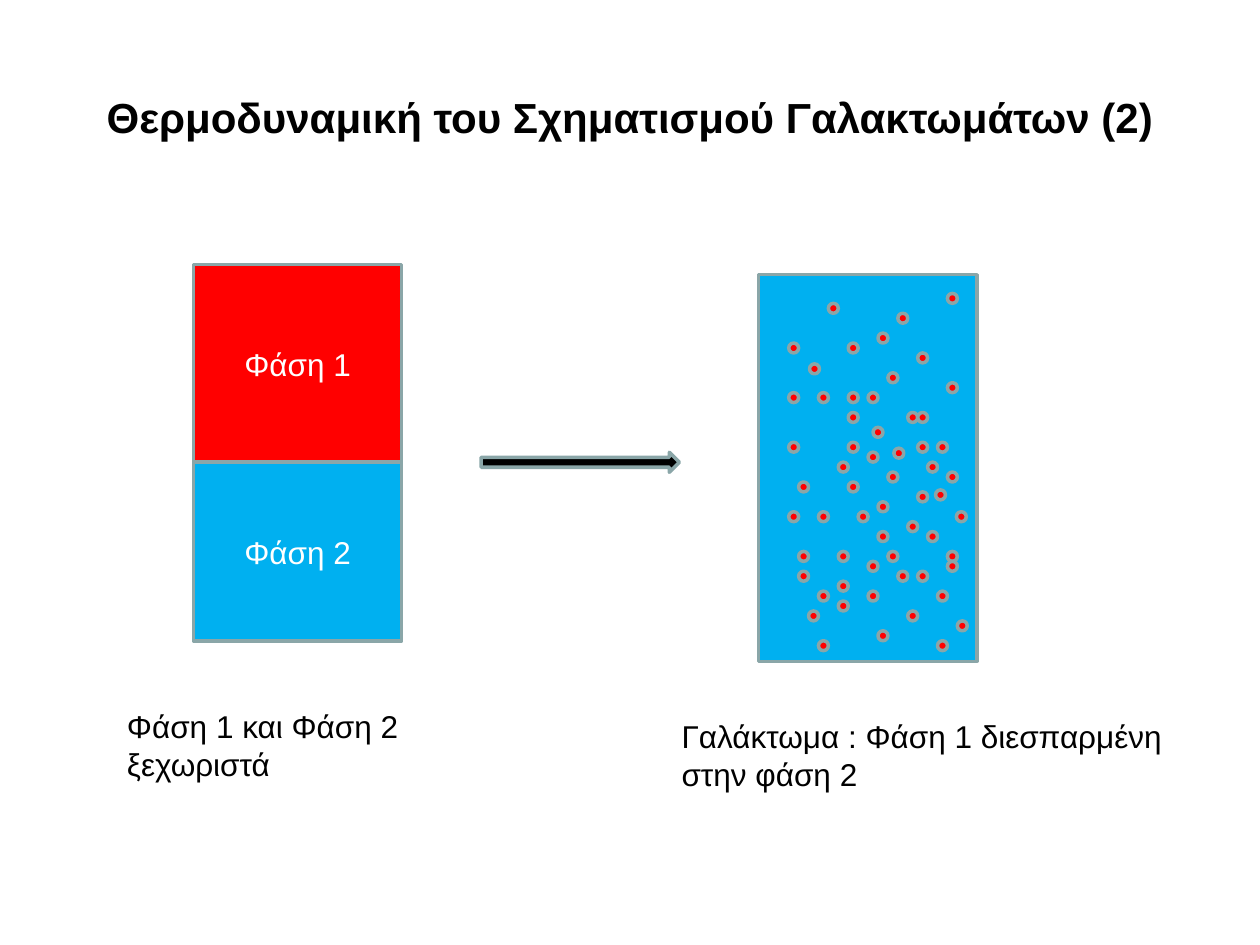
import pptx
import pptx.dml.color
import pptx.enum.shapes
import pptx.enum.text
import pptx.util

Pt = pptx.util.Pt
SHAPE = pptx.enum.shapes.MSO_SHAPE
ALIGN = pptx.enum.text.PP_ALIGN
ANCHOR = pptx.enum.text.MSO_ANCHOR

RED, BLUE, BLACK, WHITE, OUTLINE = "FF0000", "00B0F0", "000000", "FFFFFF", "8AA6A8"

# Droplet columns in each row of a 2 mm grid
DROPLET_STEP = 5.67
DROPLET_LEFT, DROPLET_TOP = 450.7, 167.7
DROPLETS = {
    0: [16], 1: [4], 2: [11], 4: [9], 5: [0, 6], 6: [13], 7.1: [2.1],
    8: [10], 9: [16], 10: [0, 3, 6, 8], 12: [6, 12, 13], 13.5: [8.5],
    15: [0, 6, 13, 15], 15.6: [10.6], 16: [8], 17: [5, 14], 18: [10, 16],
    19: [1, 6], 19.8: [14.8], 20: [13], 21: [9], 22: [0, 3, 7, 16.9],
    23: [12], 24: [9, 14], 26: [1, 5, 10, 16], 27: [8, 16],
    28: [1, 11, 13], 29: [5], 30: [3, 8, 15], 31: [5], 32: [2, 12],
    33: [17], 34: [9], 35: [3, 15],
}


def color(value):
    return pptx.dml.color.RGBColor.from_string(value)


def write(frame, *lines, size=18, fill=BLACK, bold=False, align=ALIGN.LEFT,
          anchor=ANCHOR.TOP, wrap=True):
    frame.word_wrap = wrap
    frame.vertical_anchor = anchor
    for index, line in enumerate(lines):
        para = frame.add_paragraph() if index else frame.paragraphs[0]
        para.alignment = align
        span = para.add_run()
        span.text = line
        span.font.name = "Arial"
        span.font.size = Pt(size)
        span.font.bold = bold
        span.font.color.rgb = color(fill)


class Builder:
    def __init__(self, deck):
        self.line_width = 2
        self.page = deck.slides.add_slide(deck.slide_layouts[5])

    def title(self, text, *bounds):
        box = self.page.shapes.title
        box.left, box.top, box.width, box.height = map(Pt, bounds)
        write(box.text_frame, text, size=24, bold=True, align=ALIGN.CENTER,
              anchor=ANCHOR.MIDDLE)

    def shape(self, kind, fill, *bounds, text=None):
        box = self.page.shapes.add_shape(kind, *map(Pt, bounds))
        box.shadow.inherit = False
        box.fill.solid()
        box.fill.fore_color.rgb = color(fill)
        box.line.color.rgb = color(OUTLINE)
        box.line.width = Pt(self.line_width)
        if text:
            write(box.text_frame, text, fill=WHITE, align=ALIGN.CENTER,
                  anchor=ANCHOR.MIDDLE)

    def caption(self, *lines, bounds):
        box = self.page.shapes.add_textbox(*map(Pt, bounds))
        write(box.text_frame, *lines, wrap=False)


def main():
    deck = pptx.Presentation()
    deck.slide_width, deck.slide_height = Pt(720), Pt(540)
    builder = Builder(deck)
    builder.title("Θερμοδυναμική του Σχηματισμού Γαλακτωμάτων (2)",
                  36, 21.6, 648, 90)

    # Separate phases
    builder.shape(SHAPE.RECTANGLE, BLUE, 110.6, 264.2, 119, 102.2, text="Φάση 2")
    builder.shape(SHAPE.RECTANGLE, RED, 110.6, 151.2, 119, 113, text="Φάση 1")
    builder.caption("Φάση 1 και Φάση 2", "ξεχωριστά",
                    bounds=(65.5, 400.3, 175.7, 51))

    # Mixing
    builder.shape(SHAPE.RIGHT_ARROW, BLACK, 275, 258.5, 113.2, 11.4)

    # Emulsion with its droplets
    builder.shape(SHAPE.RECTANGLE, BLUE, 433.6, 157, 124.6, 221)
    for row, columns in DROPLETS.items():
        for column in columns:
            builder.shape(SHAPE.OVAL, RED,
                          DROPLET_LEFT + column * DROPLET_STEP,
                          DROPLET_TOP + row * DROPLET_STEP,
                          DROPLET_STEP, DROPLET_STEP)
    builder.caption("Γαλάκτωμα : Φάση 1 διεσπαρμένη", "στην φάση 2",
                    bounds=(382.4, 406, 291.6, 51))

    deck.save("out.pptx")


if __name__ == "__main__":
    main()
